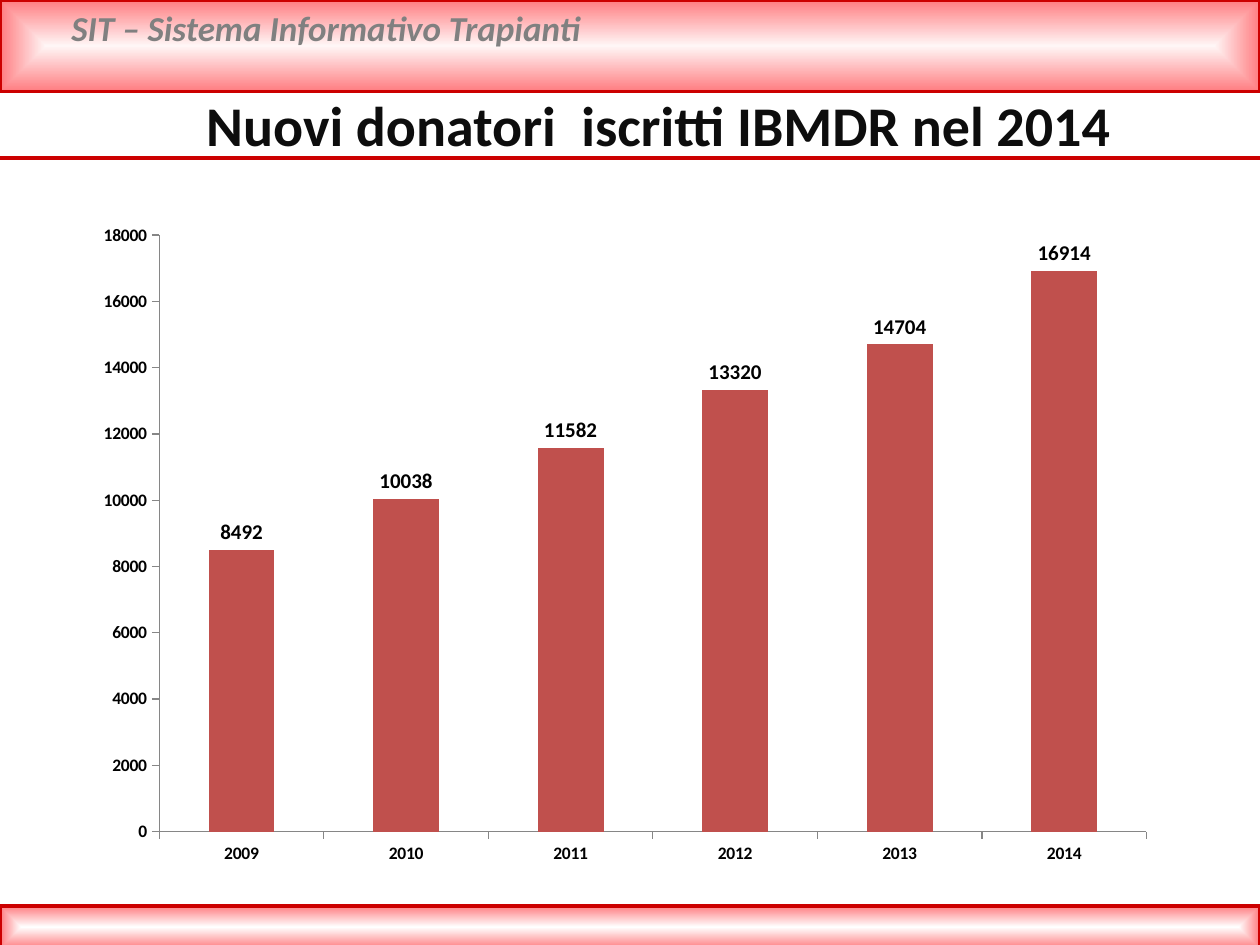
from dataclasses import dataclass

import pptx
import pptx.chart.data
import pptx.dml.color
import pptx.enum.chart
import pptx.enum.shapes
import pptx.enum.text
import pptx.oxml
import pptx.oxml.ns
import pptx.util
from pptx.util import Cm

COLORS = {
    "red": "CC0000",
    "pink": "FF7C80",
    "pale": "FFF6F6",
    "white": "FFFFFF",
    "grey": "808080",
    "title": "0D0D0D",
    "bar": "C0504D",
    "axis": "868686",
    "black": "000000",
}
FONT = "Calibri"
WIDTH, HEIGHT = Cm(25.4), Cm(19.05)
DONORS = {"2009": 8492, "2010": 10038, "2011": 11582,
          "2012": 13320, "2013": 14704, "2014": 16914}


@dataclass
class Band:
    top: float
    height: float
    centre: str


BANDS = [Band(0, 1.85, "pale"), Band(18.26, 0.86, "white")]


def rgb(name: str) -> pptx.dml.color.RGBColor:
    return pptx.dml.color.RGBColor.from_string(COLORS[name])


def set_font(font, color: str, size: float, **flags: bool) -> None:
    values = {"name": FONT, "size": pptx.util.Pt(size), **flags}
    for attr, value in values.items():
        setattr(font, attr, value)
    font.color.rgb = rgb(color)


def set_line(line, color: str, width: float) -> None:
    line.color.rgb = rgb(color)
    line.width = pptx.util.Pt(width)


def add_band(s, band: Band) -> None:
    """Add a full-width bar that fades from its centre to pink edges."""
    sp = s.shapes.add_shape(pptx.enum.shapes.MSO_SHAPE.RECTANGLE,
                            0, Cm(band.top), WIDTH, Cm(band.height))
    sp.shadow.inherit = False
    set_line(sp.line, "red", 2)
    sp.fill.gradient()
    for stop, color in zip(sp.fill.gradient_stops, (band.centre, "pink")):
        stop.color.rgb = rgb(color)
    lin = sp.element.spPr.find(".//" + pptx.oxml.ns.qn("a:lin"))
    lin.getparent().replace(lin, pptx.oxml.parse_xml(
        f'<a:path {pptx.oxml.ns.nsdecls("a")} path="shape"><a:fillToRect '
        'l="50000" t="50000" r="50000" b="50000"/></a:path>'))


def add_rule(s, top: float) -> None:
    line = s.shapes.add_connector(pptx.enum.shapes.MSO_CONNECTOR.STRAIGHT,
                                  0, Cm(top), WIDTH, Cm(top))
    set_line(line.line, "red", 2)
    line.element.spPr.append(pptx.oxml.parse_xml(
        f'<a:effectLst {pptx.oxml.ns.nsdecls("a")}/>'))


def write(sp, text: str, color: str, size: float, **flags: bool):
    tf = sp.text_frame
    tf.word_wrap = True
    tf.auto_size = pptx.enum.text.MSO_AUTO_SIZE.NONE
    p = tf.paragraphs[0]
    r = p.add_run()
    r.text = text
    set_font(r.font, color, size, **flags)
    return p


def place_title(s) -> None:
    sp = s.shapes.title
    sp.left, sp.top, sp.width, sp.height = Cm(3.68), Cm(1.68), Cm(19.2), Cm(1.63)
    p = write(sp, "Nuovi donatori  iscritti IBMDR nel 2014", "title", 32, bold=True)
    p.alignment = pptx.enum.text.PP_ALIGN.CENTER
    sp.text_frame.vertical_anchor = pptx.enum.text.MSO_ANCHOR.MIDDLE


def fix_plot_area(chart, x: float, y: float, w: float, h: float) -> None:
    """Set the inner plot area as fractions of the chart."""
    plot_area = chart.element.chart.plotArea
    for old in plot_area.findall(pptx.oxml.ns.qn("c:layout")):
        plot_area.remove(old)
    sizes = "".join(f'<c:{key} val="{value}"/>'
                    for key, value in zip("xywh", (x, y, w, h)))
    plot_area.insert(0, pptx.oxml.parse_xml(
        f'<c:layout {pptx.oxml.ns.nsdecls("c")}><c:manualLayout>'
        '<c:layoutTarget val="inner"/><c:xMode val="edge"/><c:yMode val="edge"/>'
        f'{sizes}</c:manualLayout></c:layout>'))


def add_donor_chart(s) -> None:
    data = pptx.chart.data.CategoryChartData()
    data.categories = list(DONORS)
    data.add_series("Series 1", list(DONORS.values()))
    chart = s.shapes.add_chart(
        pptx.enum.chart.XL_CHART_TYPE.COLUMN_CLUSTERED,
        Cm(1.68), Cm(4.34), Cm(21.87), Cm(13.36), data).chart
    chart.has_legend = False
    chart.has_title = False
    set_font(chart.font, "black", 10)
    fix_plot_area(chart, 0.07, 0.03, 0.91, 0.9)

    for axis in (chart.category_axis, chart.value_axis):
        axis.has_major_gridlines = False
        axis.major_tick_mark = pptx.enum.chart.XL_TICK_MARK.OUTSIDE
        set_line(axis.format.line, "axis", 0.75)
        set_font(axis.tick_labels.font, "black", 10, bold=True)
    scale = {"minimum_scale": 0, "maximum_scale": 18000, "major_unit": 2000}
    for attr, value in scale.items():
        setattr(chart.value_axis, attr, value)

    plot = chart.plots[0]
    plot.gap_width = 150
    plot.vary_by_categories = False
    fill = plot.series[0].format.fill
    fill.solid()
    fill.fore_color.rgb = rgb("bar")
    plot.has_data_labels = True
    labels = plot.data_labels
    labels.show_value = True
    labels.position = pptx.enum.chart.XL_LABEL_POSITION.OUTSIDE_END
    set_font(labels.font, "black", 12, bold=True)


def main() -> None:
    prs = pptx.Presentation()
    prs.slide_width, prs.slide_height = WIDTH, HEIGHT
    s = prs.slides.add_slide(prs.slide_layouts[5])
    for band in BANDS:
        add_band(s, band)
    header = s.shapes.add_textbox(Cm(1.19), 0, Cm(22.81), Cm(1.12))
    write(header, "SIT – Sistema Informativo Trapianti", "grey", 20,
          bold=True, italic=True)
    add_rule(s, 3.18)
    place_title(s)
    add_donor_chart(s)
    prs.save("out.pptx")


if __name__ == "__main__":
    main()
